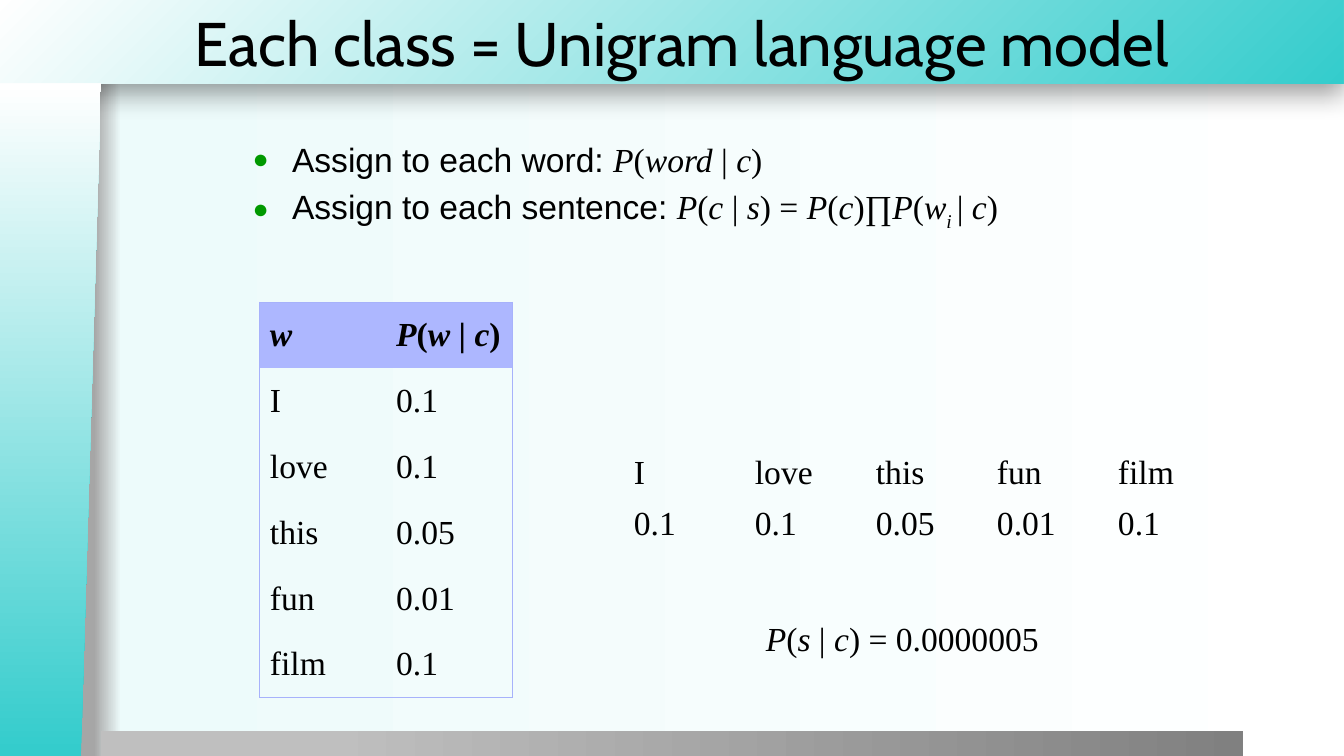
from dataclasses import dataclass

from lxml import etree
from pptx import Presentation
from pptx.dml.color import RGBColor
from pptx.enum.shapes import MSO_SHAPE
from pptx.enum.text import MSO_ANCHOR
from pptx.oxml import parse_xml
from pptx.oxml.ns import nsdecls, qn
from pptx.util import Cm, Pt

RECT = MSO_SHAPE.RECTANGLE
MANUAL_INPUT = MSO_SHAPE.FLOWCHART_MANUAL_INPUT
TOP, MIDDLE = MSO_ANCHOR.TOP, MSO_ANCHOR.MIDDLE

BLACK = RGBColor(0x00, 0x00, 0x00)
WHITE = RGBColor(0xFF, 0xFF, 0xFF)
TEAL = RGBColor(0x34, 0xCC, 0xCC)
PALE_TEAL = RGBColor(0xED, 0xFB, 0xFB)
EDGE_GRAY = RGBColor(0xA6, 0xA6, 0xA6)
LIGHT_GRAY = RGBColor(0xBF, 0xBF, 0xBF)
DARK_GRAY = RGBColor(0x80, 0x80, 0x80)
GREEN = RGBColor(0x00, 0x99, 0x00)
HEADER_BLUE = RGBColor(0xAD, 0xB7, 0xFF)
BORDER_BLUE = RGBColor(0xA7, 0xB2, 0xFB)

SANS, SERIF, TITLE_FONT = "Arial", "Times New Roman", "Cabin"
NO_STYLE = "{2D5ABB26-0587-4C30-8999-92F81FD0307C}"

Box = tuple[float, float, float, float]
Stops = list[tuple[int, RGBColor]]

LINEAR = '<a:lin ang="0" scaled="0"/>'
FROM_CORNER = '<a:path path="circle"><a:fillToRect l="100000" t="100000"/></a:path>'


@dataclass
class Panel:
    shape: MSO_SHAPE
    box: Box
    stops: Stops
    direction: str = LINEAR
    rotation: int = 0
    flip: bool = False
    shadow: bool = False


@dataclass
class Grid:
    left: float
    top: float
    col_width: float
    row_height: float
    rows: list[list[str]]
    anchor: MSO_ANCHOR = TOP
    margin: float = 0.13
    header: bool = False
    framed: bool = False


PANELS = [
    Panel(RECT, (-0.03, 0, 33.88, 2.11), [(0, TEAL), (100, WHITE)], FROM_CORNER, shadow=True),
    Panel(RECT, (2.54, 18.42, 28.78, 0.65), [(20, LIGHT_GRAY), (100, DARK_GRAY)]),
    Panel(MANUAL_INPUT, (-7.21, 9.32, 16.97, 2.54), [(1, TEAL), (100, WHITE)],
          rotation=270, flip=True),
]

WORDS = [("I", "0.1"), ("love", "0.1"), ("this", "0.05"), ("fun", "0.01"), ("film", "0.1")]

GRIDS = [
    Grid(6.55, 7.62, 3.18, 1.66, [["*w*", "*P*(*w* | *c*)"], *map(list, WORDS)],
         anchor=MIDDLE, margin=0.1, header=True, framed=True),
    Grid(15.72, 11.33, 3.05, 1.04, [list(row) for row in zip(*WORDS)]),
]


def set_gradient(fill, root, stops: Stops, direction: str = LINEAR) -> None:
    """Fill with any number of stops; root is the element that holds the fill."""
    fill.gradient()
    old = root.find(".//" + qn("a:gradFill"))
    gs = "".join(f'<a:gs pos="{pos * 1000}"><a:srgbClr val="{color}"/></a:gs>'
                 for pos, color in stops)
    new = parse_xml(f'<a:gradFill {nsdecls("a")} rotWithShape="1">'
                    f"<a:gsLst>{gs}</a:gsLst>{direction}</a:gradFill>")
    old.getparent().replace(old, new)


def add_panel(s, panel: Panel) -> None:
    sp = s.shapes.add_shape(panel.shape, *map(Cm, panel.box))
    sp.rotation = panel.rotation
    sp.line.fill.background()
    sp.shadow.inherit = False
    spPr = sp._element.spPr
    set_gradient(sp.fill, spPr, panel.stops, panel.direction)
    if panel.flip:
        spPr.find(qn("a:xfrm")).set("flipV", "1")
    if panel.shadow:
        spPr.find(qn("a:effectLst")).append(parse_xml(
            f'<a:outerShdw {nsdecls("a")} blurRad="{Pt(20)}" dist="{Pt(6)}" dir="5400000">'
            f'<a:srgbClr val="{BLACK}"><a:alpha val="40000"/></a:srgbClr></a:outerShdw>'))


def write(p, text: str, *, font: str = SERIF, size: float = 24,
          bold: bool = False, subscript: bool = False) -> None:
    """Add text to a paragraph; parts between asterisks are italic."""
    for i, part in enumerate(text.split("*")):
        if not part:
            continue
        r = p.add_run()
        r.text = part
        r.font.name, r.font.size = font, Pt(size)
        r.font.bold, r.font.italic = bold, i % 2 == 1
        r.font.color.rgb = BLACK
        if subscript:
            r._r.get_or_add_rPr().set("baseline", "-25000")


def add_text_frame(s, box: Box, anchor: MSO_ANCHOR = TOP):
    tf = s.shapes.add_textbox(*map(Cm, box)).text_frame
    tf.word_wrap = True
    tf.vertical_anchor = anchor
    return tf


def set_bullet(p) -> None:
    p.space_before = Pt(5)
    pPr = p._p.get_or_add_pPr()
    pPr.set("marL", str(Cm(0.99)))
    pPr.set("indent", str(-Cm(0.99)))
    color = etree.SubElement(pPr, qn("a:buClr"))
    etree.SubElement(color, qn("a:srgbClr"), val=str(GREEN))
    etree.SubElement(pPr, qn("a:buSzPct"), val="80000")
    etree.SubElement(pPr, qn("a:buFont"), typeface=SANS)
    etree.SubElement(pPr, qn("a:buChar"), char="●")


def set_borders(cell, sides: dict[str, bool]) -> None:
    tcPr = cell._tc.get_or_add_tcPr()
    for side, shown in sides.items():
        if shown:
            ln = etree.SubElement(tcPr, qn(f"a:ln{side}"), w=str(Pt(0.75)))
            fill = etree.SubElement(ln, qn("a:solidFill"))
            etree.SubElement(fill, qn("a:srgbClr"), val=str(BORDER_BLUE))


def add_grid(s, grid: Grid) -> None:
    n_rows, n_cols = len(grid.rows), len(grid.rows[0])
    table = s.shapes.add_table(n_rows, n_cols, Cm(grid.left), Cm(grid.top),
                               Cm(grid.col_width * n_cols), Cm(grid.row_height * n_rows)).table
    table.first_row = table.horz_banding = False
    table._tbl.tblPr.find(qn("a:tableStyleId")).text = NO_STYLE
    for i, row in enumerate(grid.rows):
        for j, text in enumerate(row):
            cell = table.cell(i, j)
            is_header = grid.header and i == 0
            cell.vertical_anchor = grid.anchor
            cell.margin_top = cell.margin_bottom = Cm(grid.margin)
            if grid.framed:
                set_borders(cell, {"L": j == 0, "R": j == n_cols - 1,
                                   "T": i == 0, "B": i == n_rows - 1})
            if is_header:
                cell.fill.solid()
                cell.fill.fore_color.rgb = HEADER_BLUE
            else:
                cell.fill.background()
            write(cell.text_frame.paragraphs[0], text, bold=is_header)


def main() -> None:
    prs = Presentation()
    prs.slide_width, prs.slide_height = Cm(33.87), Cm(19.05)
    s = prs.slides.add_slide(prs.slide_layouts[6])
    set_gradient(s.background.fill, s._element,
                 [(7, EDGE_GRAY), (9, PALE_TEAL), (100, WHITE)])
    for panel in PANELS:
        add_panel(s, panel)

    title = add_text_frame(s, (4.65, 0, 29.24, 2.11), MIDDLE)
    write(title.paragraphs[0], "Each class = Unigram language model", font=TITLE_FONT, size=44)

    body = add_text_frame(s, (6.12, 3.38, 22.89, 14.71))
    word, sentence = body.paragraphs[0], body.add_paragraph()
    for p in (word, sentence):
        set_bullet(p)
    write(word, "Assign to each word: ", font=SANS)
    write(word, "*P*(*word* | *c*)")
    write(sentence, "Assign to each sentence: ", font=SANS)
    write(sentence, "*P*(*c *| *s*) = *P*(*c*)∏*P*(*w*")
    write(sentence, "*i *", subscript=True)
    write(sentence, "| *c*)")

    for grid in GRIDS:
        add_grid(s, grid)

    result = add_text_frame(s, (19.05, 15.44, 9.09, 1.27))
    write(result.paragraphs[0], "*P*(*s* | *c*) = 0.0000005")
    prs.save("out.pptx")


if __name__ == "__main__":
    main()
